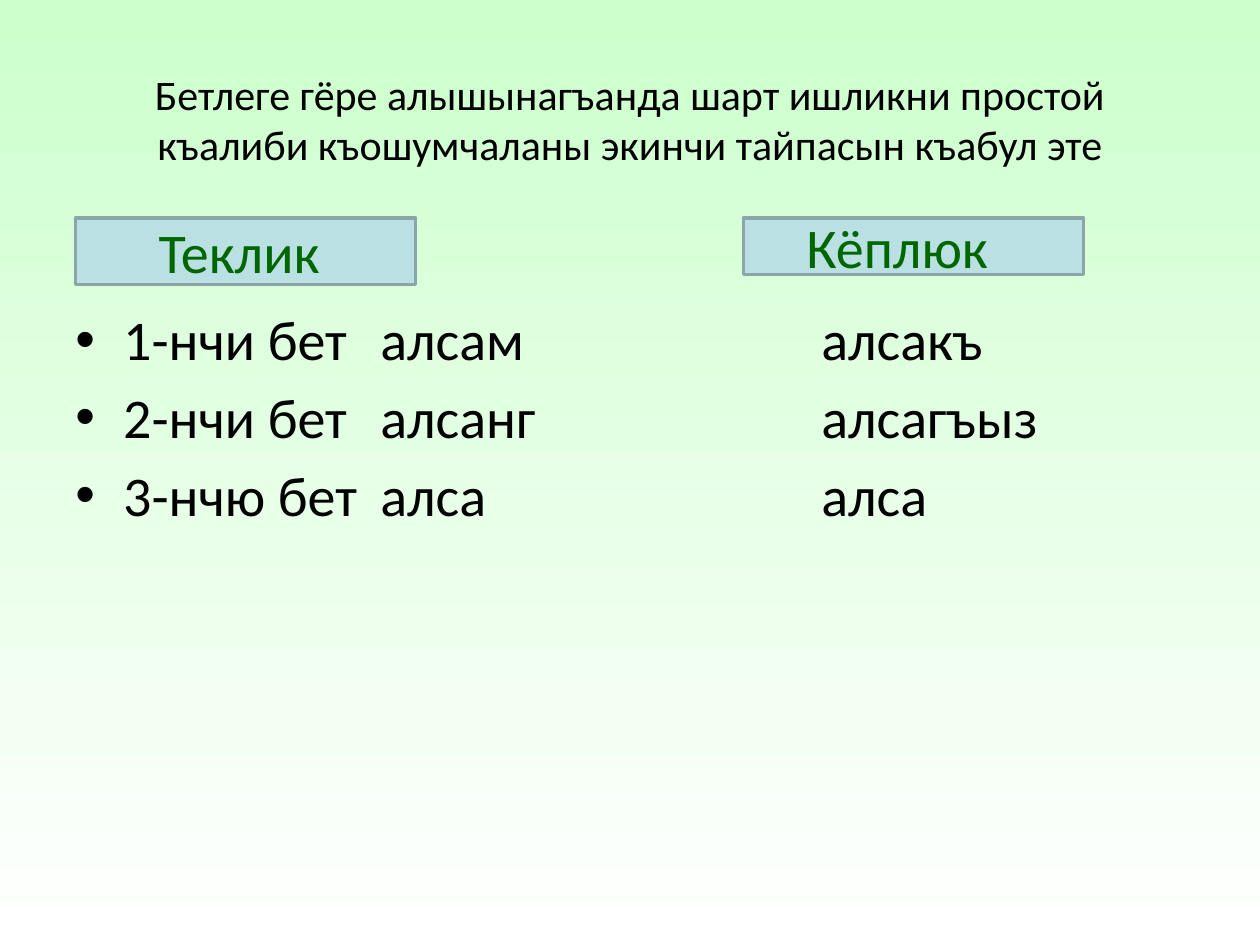
from lxml.etree import SubElement
from pptx import Presentation
from pptx.dml.color import RGBColor
from pptx.enum.shapes import MSO_SHAPE as Shape
from pptx.enum.text import MSO_ANCHOR as Anchor, PP_ALIGN as Align
from pptx.oxml.ns import qn
from pptx.util import Inches, Pt

COLORS = {"mint": "CCFFCC", "white": "FFFFFF", "black": "000000",
          "green": "006600", "box": "BBE0E3", "edge": "8AA6A8"}
WIDTH, HEIGHT = 10, 7.5


def color(name):
    return RGBColor.from_string(COLORS[name])


def apply(target, formats):
    for name, value in formats.items():
        setattr(target, name, value)


class SlideBuilder:
    """Holds the text style and the current slide; lengths are shares of the slide."""

    font = {"name": "Calibri"}
    frame = {"word_wrap": True, "vertical_anchor": Anchor.MIDDLE}

    def __init__(self, presentation):
        self.slide = presentation.slides.add_slide(presentation.slide_layouts[6])

    def place(self, left, top, width, height):
        return [Inches(round(share * side, 2)) for share, side in
                zip((left, top, width, height), (WIDTH, HEIGHT) * 2)]

    def background(self, start, end):
        fill = self.slide.background.fill
        fill.gradient()
        fill.gradient_angle = 270
        for stop, name in zip(fill.gradient_stops, (start, end)):
            stop.color.rgb = color(name)

    def add_text(self, paragraph, text, size, ink, **formats):
        run = paragraph.add_run()
        run.text = text
        apply(run.font, {**self.font, "size": Pt(size)})
        run.font.color.rgb = color(ink)
        apply(paragraph, formats)

    def title(self, area, text):
        frame = self.slide.shapes.add_textbox(*self.place(*area)).text_frame
        apply(frame, self.frame)
        self.add_text(frame.paragraphs[0], text, 24, "black", alignment=Align.CENTER)

    def bullets(self, area, rows, tabs, margin_top):
        frame = self.slide.shapes.add_textbox(*self.place(*area)).text_frame
        apply(frame, {"word_wrap": True, "margin_top": Inches(margin_top)})
        for index, row in enumerate(rows):
            paragraph = frame.add_paragraph() if index else frame.paragraphs[0]
            self.add_text(paragraph, "\t".join(row), 32, "black", space_before=Pt(6))
            properties = paragraph._p.get_or_add_pPr()
            properties.set("marL", str(Inches(0.38)))
            properties.set("indent", str(Inches(-0.38)))
            SubElement(properties, qn("a:buFont"), typeface="Arial")
            SubElement(properties, qn("a:buChar"), char="•")
            stops = SubElement(properties, qn("a:tabLst"))
            for tab in tabs:
                SubElement(stops, qn("a:tab"), pos=str(Inches(tab)), algn="l")

    def heading(self, area, text, alignment, **margins):
        shape = self.slide.shapes.add_shape(Shape.RECTANGLE, *self.place(*area))
        shape.shadow.inherit = False
        shape.fill.solid()
        shape.fill.fore_color.rgb = color("box")
        shape.line.color.rgb = color("edge")
        shape.line.width = Pt(2)
        apply(shape.text_frame, {**self.frame, **margins})
        self.add_text(shape.text_frame.paragraphs[0], text, 32, "green",
                      alignment=alignment)


def main():
    presentation = Presentation()
    apply(presentation, {"slide_width": Inches(WIDTH), "slide_height": Inches(HEIGHT)})
    builder = SlideBuilder(presentation)
    builder.background("mint", "white")
    builder.title((0.05, 0.04, 0.9, 0.17),
                  "Бетлеге гёре алышынагъанда шарт ишликни простой "
                  "къалиби къошумчаланы экинчи тайпасын къабул эте")
    builder.bullets((0.05, 0.23, 0.9, 0.66),
                    [("1-нчи бет", "алсам", "алсакъ"),
                     ("2-нчи бет", "алсанг", "алсагъыз"),
                     ("3-нчю бет", "алса", "алса")],
                    tabs=(2.42, 5.92), margin_top=0.69)
    builder.heading((0.06, 0.23, 0.27, 0.07), "Теклик", Align.CENTER,
                    margin_right=Inches(0.2))
    builder.heading((0.59, 0.23, 0.27, 0.06), "Кёплюк", Align.LEFT,
                    margin_left=Inches(0.5))
    presentation.save("out.pptx")


if __name__ == "__main__":
    main()
